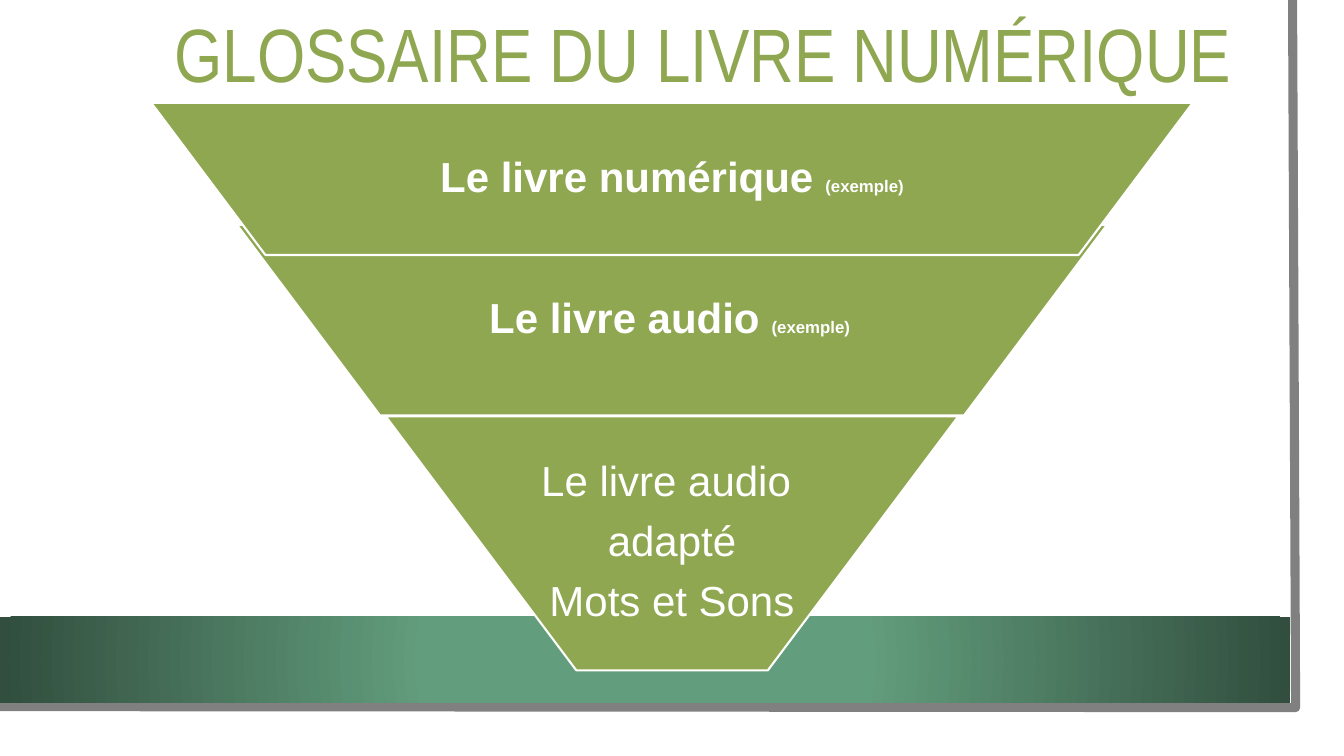
"""Build the glossary slide with its three-tier inverted funnel."""
from pptx import Presentation
from pptx.dml.color import RGBColor
from pptx.enum.shapes import MSO_SHAPE as Shape
from pptx.enum.text import MSO_ANCHOR as Anchor, PP_ALIGN as Align
from pptx.oxml import parse_xml
from pptx.oxml.ns import nsdecls
from pptx.util import Inches, Pt

GREEN, WHITE, GREY = "8FA751", "FFFFFF", "808080"
TITLE = "GLOSSAIRE DU LIVRE NUMÉRIQUE"
FRAME = [(12.82, 0), (12.85, 7.02), (-0.03, 7.01)]
BAND = (0, 6.12, 12.8, 0.85)
STOPS = [(34, "629D7D"), (100, "314E3E")]
BOLD = {"size": Pt(30), "bold": True}
SMALL = {"size": Pt(12), "bold": True}
PLAIN = {"size": Pt(30), "bold": False}
MID = 6.665
TIERS = [
    (2.23, 8.63, 1.89, 5.61, [[("Le livre audio ", BOLD), ("(exemple) ", SMALL)]]),
    (1.02, 10.33, 1.51, 6.72, [[("Le livre numérique ", BOLD), ("(exemple)", SMALL)]]),
    (4.13, 5.68, 2.52, 5.68, [[("Le livre audio ", PLAIN)], [("adapté", PLAIN)],
                              [("Mots et Sons", PLAIN)]]),
]


def tint(color):
    return RGBColor.from_string(color)


def style(item, **vals):
    for key, val in vals.items():
        setattr(item, key, val)


def box(*nums):
    return [Inches(num) for num in nums]


def stroke(shape, color, width):
    shape.line.color.rgb = tint(color)
    shape.line.width = Pt(width)
    shape.shadow.inherit = False


def write(par, text, color, **vals):
    run = par.add_run()
    run.text = text
    style(run.font, **vals)
    run.font.color.rgb = tint(color)


def draw_frame(shapes):
    start, *rest = [tuple(box(*point)) for point in FRAME]
    path = shapes.build_freeform(*start)
    path.add_line_segments(rest, close=False)
    frame = path.convert_to_shape()
    frame.fill.background()
    stroke(frame, GREY, 6.5)


def draw_band(shapes):
    band = shapes.add_shape(Shape.RECTANGLE, *box(*BAND))
    band.line.fill.background()
    band.shadow.inherit = False
    stops = "".join(f'<a:gs pos="{pos * 1000}"><a:srgbClr val="{color}"/></a:gs>'
                    for pos, color in STOPS)
    band._element.spPr.insert(2, parse_xml(
        f'<a:gradFill {nsdecls("a")}><a:gsLst>{stops}</a:gsLst><a:path path="circle">'
        '<a:fillToRect l="50000" t="50000" r="50000" b="50000"/></a:path></a:gradFill>'))


def draw_tier(shapes, top, wide, high, span, lines):
    tier = shapes.add_shape(Shape.TRAPEZOID, *box(MID - wide / 2, top, wide, high))
    tier.rotation = 180
    tier.adjustments[0] = 0.75
    tier.fill.solid()
    tier.fill.fore_color.rgb = tint(GREEN)
    stroke(tier, WHITE, 1.5)
    frame = shapes.add_textbox(*box(MID - span / 2, top, span, high)).text_frame
    style(frame, word_wrap=True, vertical_anchor=Anchor.MIDDLE)
    for side in ("left", "right", "top", "bottom"):
        setattr(frame, f"margin_{side}", Inches(0.04))
    for row, runs in enumerate(lines):
        par = frame.add_paragraph() if row else frame.paragraphs[0]
        style(par, alignment=Align.CENTER, line_spacing=0.9, space_after=Pt(10.5))
        for text, look in runs:
            write(par, text, WHITE, name="Arial", **look)


def main():
    deck = Presentation()
    style(deck, slide_width=Inches(13.33), slide_height=Inches(7.5))
    shapes = deck.slides.add_slide(deck.slide_layouts[5]).shapes
    draw_frame(shapes)
    draw_band(shapes)
    title = shapes.title
    left, top, width, height = box(1.63, -0.05, 11.37, 1.26)
    style(title, left=left, top=top, width=width, height=height)
    style(title.text_frame, word_wrap=True, vertical_anchor=Anchor.MIDDLE)
    par = title.text_frame.paragraphs[0]
    style(par, alignment=Align.LEFT, line_spacing=0.9)
    write(par, TITLE, GREEN, name="Arial Narrow", size=Pt(54))
    for tier in TIERS:
        draw_tier(shapes, *tier)
    deck.save("out.pptx")


if __name__ == "__main__":
    main()
